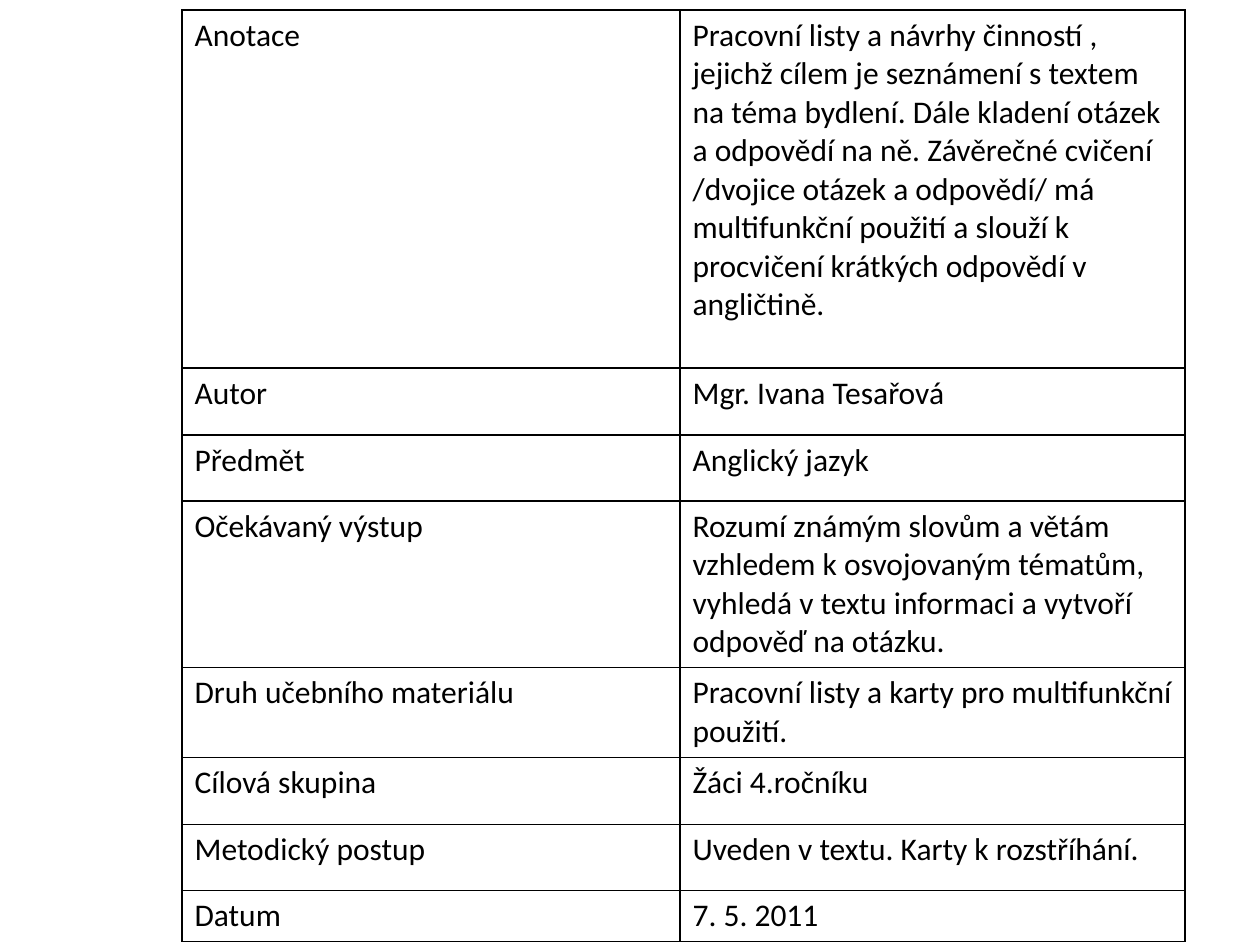
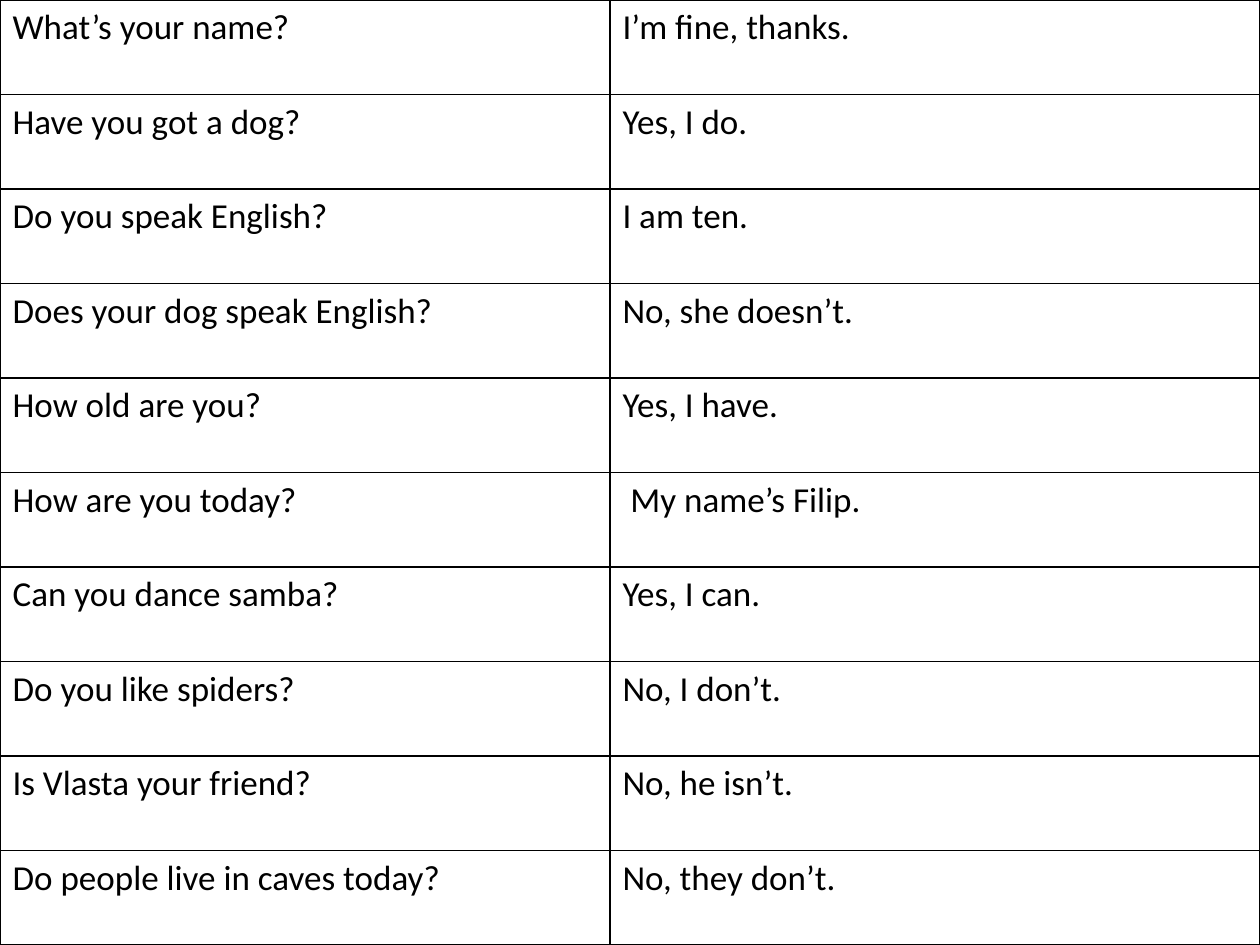
import dataclasses

import pptx
import pptx.dml.color
import pptx.oxml
import pptx.oxml.ns
import pptx.util

PX = 914400 / 126  # EMU per pixel


@dataclasses.dataclass(frozen=True)
class Theme:
    font: str = "Calibri"
    ink: str = "000000"
    paper: str = "FFFFFF"
    border_pt: int = 1
    info_pt: int = 18
    card_pt: int = 20


theme = Theme()


def px(n):
    return pptx.util.Emu(round(n * PX))


def add_grid(slide, left, top, col_widths, row_heights, rows, size):
    """Add a plain ruled table; a line break in a cell starts a new paragraph."""
    table = slide.shapes.add_table(
        len(rows), len(col_widths), px(left), px(top),
        px(sum(col_widths)), px(sum(row_heights))).table
    table.first_row = table.horz_banding = False
    for column, width in zip(table.columns, col_widths):
        column.width = px(width)
    for row, height, texts in zip(table.rows, row_heights, rows):
        row.height = px(height)
        for cell, text in zip(row.cells, texts):
            cell.text = text
            for p in cell.text_frame.paragraphs:
                p.font.name = theme.font
                p.font.size = pptx.util.Pt(size)
                p.font.color.rgb = pptx.dml.color.RGBColor.from_string(theme.ink)
            cell.fill.solid()
            cell.fill.fore_color.rgb = pptx.dml.color.RGBColor.from_string(theme.paper)
            # Borders must come before the fill in the cell properties
            for i, side in enumerate(("lnL", "lnR", "lnT", "lnB")):
                line = pptx.oxml.parse_xml(
                    f'<a:{side} {pptx.oxml.ns.nsdecls("a")} w="{pptx.util.Pt(theme.border_pt)}">'
                    f'<a:solidFill><a:srgbClr val="{theme.ink}"/></a:solidFill></a:{side}>')
                cell._tc.tcPr.insert(i, line)


prs = pptx.Presentation()
prs.slide_width, prs.slide_height = px(1260), px(945)
blank = prs.slide_layouts[6]

# Slide 1: description of the teaching material
material = [
    ("Anotace",
     "Pracovní listy a návrhy činností , jejichž cílem je seznámení s textem "
     "na téma bydlení. Dále kladení otázek a odpovědí na ně. Závěrečné cvičení\n"
     "/dvojice otázek a odpovědí/ má multifunkční použití a slouží k "
     "procvičení krátkých odpovědí v angličtině."),
    ("Autor", "Mgr. Ivana Tesařová"),
    ("Předmět", "Anglický jazyk"),
    ("Očekávaný výstup",
     "Rozumí známým slovům a větám vzhledem k osvojovaným tématům, "
     "vyhledá v textu informaci a vytvoří odpověď na otázku."),
    ("Druh učebního materiálu", "Pracovní listy a karty pro multifunkční použití."),
    ("Cílová skupina", "Žáci 4.ročníku"),
    ("Metodický postup", "Uveden v textu. Karty k rozstříhání."),
    ("Datum", "7. 5. 2011"),
]
add_grid(prs.slides.add_slide(blank), 182, 10, (498, 505),
         (358, 67, 66, 166, 90, 67, 66, 51), material, theme.info_pt)

# Slide 2: question and answer cards filling the slide
cards = [
    ("What’s your name?", "I’m fine, thanks."),
    ("Have you got a dog?", "Yes, I do."),
    ("Do you speak English?", "I am ten."),
    ("Does your dog speak English?", "No, she doesn’t."),
    ("How old are you?", "Yes, I have."),
    ("How are you today?", " My name’s Filip."),
    ("Can you dance samba?", "Yes, I can."),
    ("Do you like spiders?", "No, I don’t."),
    ("Is Vlasta your friend?", "No, he isn’t."),
    ("Do people live in caves today?", "No, they don’t."),
]
add_grid(prs.slides.add_slide(blank), 0, 0, (610, 650),
         [945 / len(cards)] * len(cards), cards, theme.card_pt)

prs.save("out.pptx")
